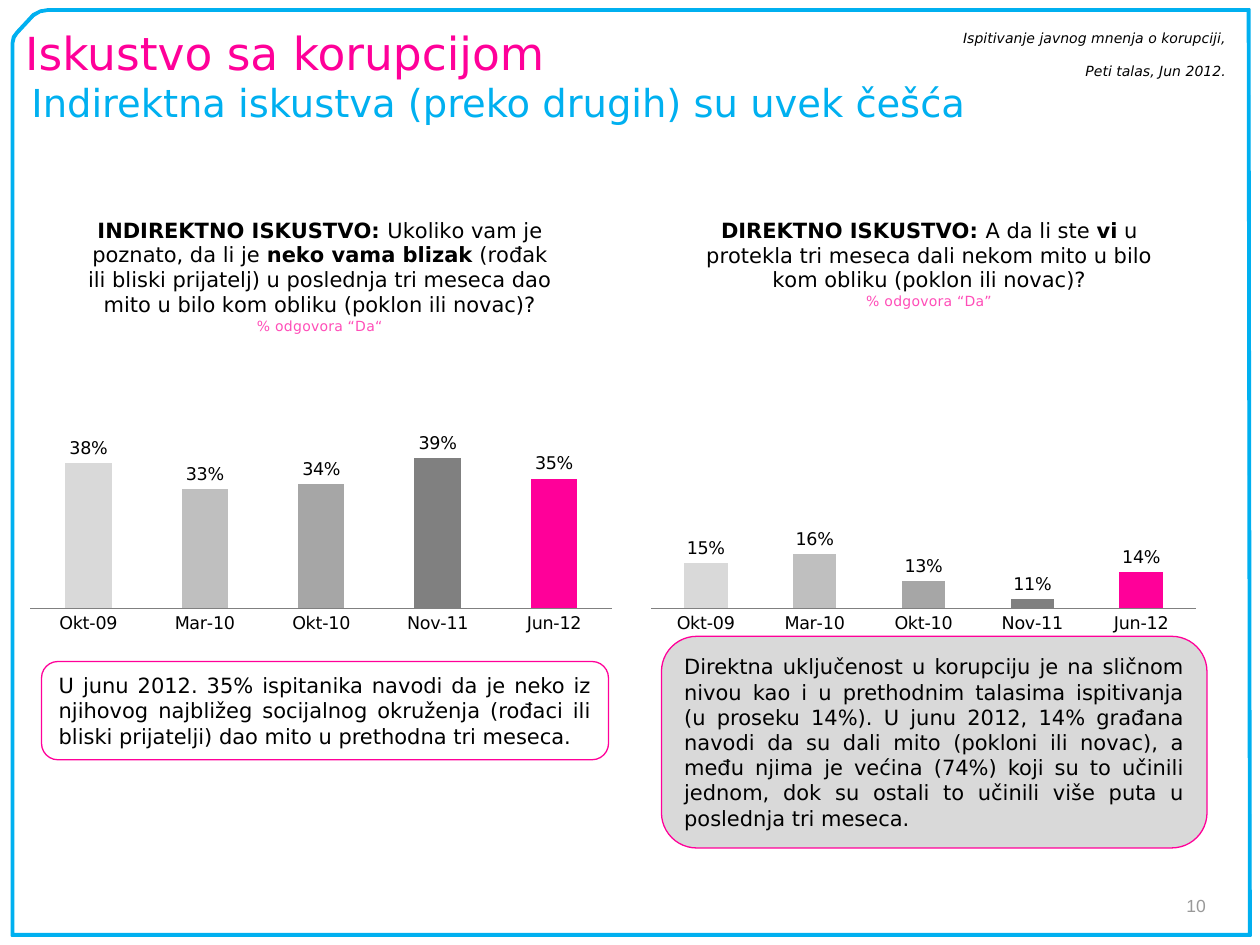
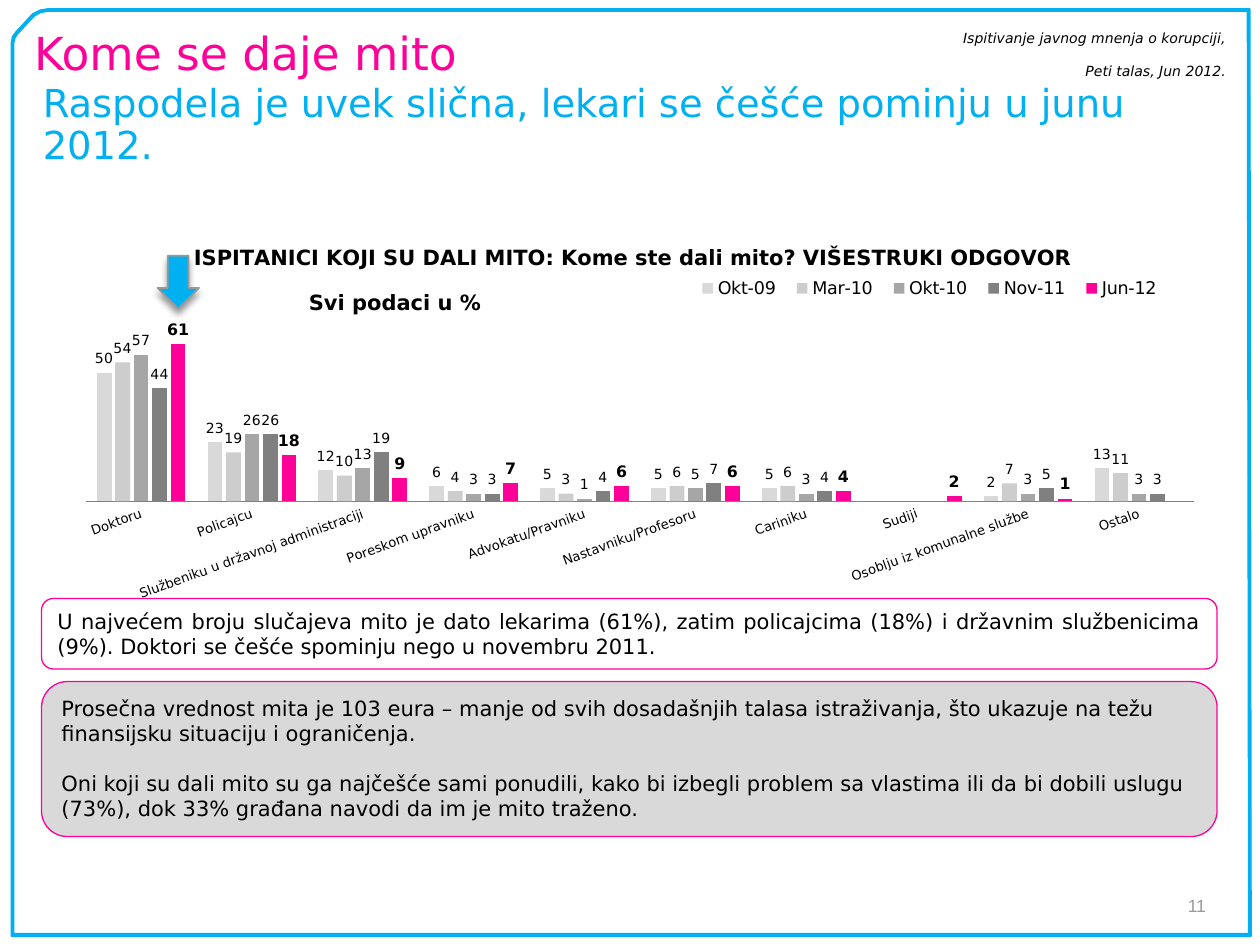
"""Build two slides on experience with corruption and bribes."""
from dataclasses import dataclass

from lxml import etree
from pptx import Presentation
from pptx.chart.data import CategoryChartData
from pptx.dml.color import RGBColor
from pptx.enum import chart as ch, shapes, text
from pptx.oxml.ns import qn
from pptx.util import Inches, Pt


@dataclass(frozen=True)
class Theme:
    """Colours, fonts and type sizes of the deck."""
    pink: str = "FF0099"
    rose: str = "FF4DB8"
    blue: str = "00B0F0"
    black: str = "000000"
    gray: str = "999999"
    axis: str = "808080"
    panel: str = "D9D9D9"
    bars: tuple = ("D9D9D9", "BFBFBF", "A6A6A6", "808080", "FF0099")
    font: str = "DejaVu Sans"
    plain: str = "Arial"
    head: float = 26
    sub: float = 22
    body: float = 12
    mid: float = 10
    bold: float = 9
    small: float = 8
    tick: float = 7.5


T = Theme()
WAVES = ("Okt-09", "Mar-10", "Okt-10", "Nov-11", "Jun-12")


def rgb(code):
    """Turn a hex code into a colour."""
    return RGBColor.from_string(code)


def style(font, size, color=T.black, name=T.font, bold=False, italic=False):
    """Format one font."""
    font.size, font.name = Pt(size), name
    font.bold, font.italic = bold, italic
    font.color.rgb = rgb(color)


def write(frame, lines, size, align="LEFT", anchor="TOP", gap=0, inset=None, **look):
    """Fill a text frame with paragraphs of one style."""
    frame.text = "\n".join(lines)
    frame.word_wrap = True
    frame.vertical_anchor = getattr(text.MSO_ANCHOR, anchor)
    if inset is not None:
        frame.margin_left = frame.margin_right = Inches(inset)
        frame.margin_top = frame.margin_bottom = Inches(inset)
    for i, para in enumerate(frame.paragraphs):
        para.alignment = getattr(text.PP_ALIGN, align)
        if i:
            para.space_before = Pt(gap)
        for run in para.runs:
            style(run.font, size, **look)


def label(slide, box, lines, size, **opts):
    """Add a text box."""
    frame = slide.shapes.add_textbox(*map(Inches, box)).text_frame
    write(frame, lines, size, **opts)
    return frame


def frame(slide):
    """Draw the border with its cut corner."""
    outer = [(0.13, 0.25), (0.1, 0.29), (0.09, 0.34), (0.09, 7.43), (9.93, 7.43),
             (9.92, 0.07), (0.38, 0.07), (0.32, 0.08), (0.26, 0.11)]
    inner = [(0.27, 0.13), (0.32, 0.1), (0.38, 0.09), (9.9, 0.09), (9.91, 7.41),
             (0.11, 7.41), (0.11, 0.34), (0.12, 0.3), (0.14, 0.27)]
    outer, inner = ([tuple(map(Inches, dot)) for dot in path] for path in (outer, inner))
    pen = slide.shapes.build_freeform(*outer[0], scale=1.0)
    pen.add_line_segments(outer[1:])
    pen.move_to(*inner[0])
    pen.add_line_segments(inner[1:])
    paint(pen.convert_to_shape(), T.blue, T.blue, 0)


def paint(shape, fill, line, width):
    """Set fill and outline, and drop the shadow."""
    shape.shadow.inherit = False
    if fill:
        shape.fill.solid()
        shape.fill.fore_color.rgb = rgb(fill)
    else:
        shape.fill.background()
    shape.line.color.rgb = rgb(line)
    shape.line.width = Pt(width)


def start(deck, title, left, sub, box, page):
    """Add a slide with border, titles, survey note and page number."""
    slide = deck.slides.add_slide(deck.slide_layouts[5])
    frame(slide)
    head = slide.shapes.title
    head.left, head.top, head.width, head.height = map(Inches, (left, 0.2, 9.61, 0.43))
    write(head.text_frame, [title], T.head, inset=0, color=T.pink)
    below = label(slide, box, [sub], T.sub, inset=0, color=T.blue)
    below.paragraphs[0].line_spacing = 0.9
    label(slide, (7, 0.18, 2.83, 0.5),
          ["Ispitivanje javnog mnenja o korupciji,", "Peti talas, Jun 2012."],
          T.small, align="RIGHT", anchor="MIDDLE", gap=9.5, italic=True)
    label(slide, (9.18, 7.1, 0.39, 0.17), [str(page)], T.mid, align="RIGHT",
          anchor="MIDDLE", inset=0, color=T.gray, name=T.plain)
    return slide


def panel(slide, box, lines, fill=None, **opts):
    """Add a rounded comment box."""
    shape = slide.shapes.add_shape(shapes.MSO_SHAPE.ROUNDED_RECTANGLE, *map(Inches, box))
    paint(shape, fill, T.pink, 0.75)
    write(shape.text_frame, lines, T.body, **opts)


def arrow(slide, box):
    """Add a down arrow with a soft shadow."""
    shape = slide.shapes.add_shape(shapes.MSO_SHAPE.DOWN_ARROW, *map(Inches, box))
    paint(shape, T.blue, T.gray, 1)
    effects = shape._element.spPr.find(qn("a:effectLst"))
    shade = etree.SubElement(effects, qn("a:outerShdw"), blurRad=str(Pt(4)),
                             dist=str(Pt(3)), dir="5400000", rotWithShape="0")
    color = etree.SubElement(shade, qn("a:srgbClr"), val=T.black)
    etree.SubElement(color, qn("a:alpha"), val="40000")


def place(node, **spots):
    """Give a chart part a manual layout."""
    lay = node.find(qn("c:layout"))
    if lay is None:
        lay = etree.Element(qn("c:layout"))
        node.insert(0, lay)
    hand = etree.SubElement(lay, qn("c:manualLayout"))
    if node.tag == qn("c:plotArea"):
        etree.SubElement(hand, qn("c:layoutTarget"), val="inner")
    for axis in "xy":
        etree.SubElement(hand, qn(f"c:{axis}Mode"), val="edge")
    for key, val in spots.items():
        etree.SubElement(hand, qn(f"c:{key}"), val=str(val))


def bars(slide, box, cats, rows, plot, span, tick, form):
    """Add a column chart whose plot fills the given slide area."""
    data = CategoryChartData()
    data.categories = cats
    for name, vals in rows:
        data.add_series(name, vals)
    kind = ch.XL_CHART_TYPE.COLUMN_CLUSTERED
    chart = slide.shapes.add_chart(kind, *map(Inches, box), data).chart
    style(chart.font, T.mid)
    chart.has_legend = False
    group = chart.plots[0]
    group.gap_width, group.overlap, group.vary_by_categories = 150, -25, False
    value, cat = chart.value_axis, chart.category_axis
    value.minimum_scale, value.maximum_scale = span
    value.has_major_gridlines = value.visible = False
    cat.major_tick_mark = ch.XL_TICK_MARK.NONE
    cat.format.line.color.rgb = rgb(T.axis)
    style(cat.tick_labels.font, tick)
    for row in group.series:
        tags = row.data_labels
        tags.show_value = True
        tags.number_format, tags.number_format_is_linked = form, False
        tags.position = ch.XL_LABEL_POSITION.OUTSIDE_END
        style(tags.font, T.mid)
    left, top, wide, high = box
    place(chart._chartSpace.chart.plotArea, x=(plot[0] - left) / wide,
          y=(plot[1] - top) / high, w=plot[2] / wide, h=plot[3] / high)
    return chart


def caption(chart, parts, note, x, y):
    """Write the chart title from plain and bold parts, with a note below."""
    block = chart.chart_title.text_frame
    para = block.paragraphs[0]
    for i, part in enumerate(parts):
        run = para.add_run()
        run.text = part
        style(run.font, T.body, bold=i % 2 == 0)
    if note:
        para = block.add_paragraph()
        para.text = note
        style(para.runs[0].font, T.small, T.rose)
    place(chart.chart_title._element, x=x, y=y)


def trend(slide, box, vals, plot, top, parts, note):
    """Add a chart of one question over all waves."""
    chart = bars(slide, box, WAVES, [("Series 1", vals)], plot, (10, top), T.mid, "0\\%")
    row = chart.plots[0].series[0]
    for i, color in enumerate(T.bars):
        fill = row.points[i].format.fill
        fill.solid()
        fill.fore_color.rgb = rgb(color)
    caption(chart, parts, note, 0.11, 0.04)


def takers(slide):
    """Add the chart of who was bribed, by wave."""
    cats = ("Doktoru", "Policajcu", "Službeniku u državnoj administraciji",
            "Poreskom upravniku", "Advokatu/Pravniku", "Nastavniku/Profesoru",
            "Cariniku", "Sudiji", "Osoblju iz komunalne službe", "Ostalo")
    vals = ((50, 23, 12, 6, 5, 5, 5, None, 2, 13),
            (54, 19, 10, 4, 3, 6, 6, None, 7, 11),
            (57, 26, 13, 3, 1, 5, 3, None, 3, 3),
            (44, 26, 19, 3, 4, 7, 4, None, 5, 3),
            (61, 18, 9, 7, 6, 6, 4, 2, 1, None))
    chart = bars(slide, (0.5, 1.75, 9.17, 3.08), cats, zip(WAVES, vals),
                 (0.68, 2.55, 8.8, 1.43), (0, 70), T.tick, "0")
    for row, color in zip(chart.plots[0].series, T.bars):
        fill = row.format.fill
        fill.solid()
        fill.fore_color.rgb = rgb(color)
        last = color == T.pink
        style(row.data_labels.font, T.bold if last else T.small, bold=last)
        if row.name == "Mar-10":
            tint = next(row._element.spPr.iter(qn("a:srgbClr")))
            etree.SubElement(tint, qn("a:alpha"), val="77000")
    chart.category_axis._element.txPr.find(qn("a:bodyPr")).set("rot", "-1200000")
    chart.has_legend = True
    key = chart.legend
    key.position = ch.XL_LEGEND_POSITION.TOP
    key.include_in_layout = False
    style(key.font, T.mid)
    place(key._element, x=0.54, y=0.13, w=0.42, h=0.09)
    caption(chart, ["ISPITANICI KOJI SU DALI MITO: Kome ste dali mito? VIŠESTRUKI ODGOVOR "],
            None, 0.11, 0.05)


def share(deck):
    """Build the slide on indirect and direct experience."""
    slide = start(deck, "Iskustvo sa korupcijom", 0.2,
                  "Indirektna iskustva (preko drugih) su uvek češća",
                  (0.25, 0.67, 8.17, 0.33), 10)
    trend(slide, (5.08, 1.54, 4.5, 3.56), (15, 16, 13, 11, 14), (5.17, 2.67, 4.32, 2.16), 40,
          ["DIREKTNO ISKUSTVO: ", "A da li ste ", "vi",
           " u protekla tri meseca dali nekom mito u bilo kom obliku (poklon ili novac)?"],
          "% odgovora “Da”")
    trend(slide, (0.14, 1.54, 4.81, 3.56), (38, 33, 34, 39, 35), (0.24, 2.77, 4.62, 2.06), 60,
          ["INDIREKTNO ISKUSTVO: ", "Ukoliko vam je poznato, da li je ", "neko vama blizak",
           " (rođak ili bliski prijatelj) u poslednja tri meseca dao mito u bilo kom obliku "
           "(poklon ili novac)?"], "% odgovora “Da“")
    panel(slide, (0.33, 5.25, 4.5, 0.78),
          ["U junu 2012. 35% ispitanika navodi da je neko iz njihovog najbližeg socijalnog "
           "okruženja (rođaci ili bliski prijatelji) dao mito u prethodna tri meseca."],
          align="JUSTIFY", anchor="MIDDLE")
    panel(slide, (5.25, 5.05, 4.33, 1.68),
          ["Direktna uključenost u korupciju je na sličnom nivou kao i u prethodnim talasima "
           "ispitivanja (u proseku 14%). U junu 2012, 14% građana navodi da su dali mito "
           "(pokloni ili novac), a među njima je većina (74%) koji su to učinili jednom, dok "
           "su ostali to učinili više puta u poslednja tri meseca."],
          T.panel, align="JUSTIFY", anchor="MIDDLE")


def bribes(deck):
    """Build the slide on who receives bribes."""
    slide = start(deck, "Kome se daje mito", 0.27,
                  "Raspodela je uvek slična, lekari se češće pominju u junu 2012.",
                  (0.34, 0.67, 9.5, 0.67), 11)
    takers(slide)
    panel(slide, (0.33, 4.75, 9.33, 0.56),
          ["U najvećem broju slučajeva mito je dato lekarima (61%), zatim policajcima (18%) i "
           "državnim službenicima (9%). Doktori se češće spominju nego u novembru 2011."],
          align="JUSTIFY", anchor="MIDDLE")
    panel(slide, (0.33, 5.41, 9.33, 1.23),
          ["Prosečna vrednost mita je 103 eura – manje od svih dosadašnjih talasa "
           "istraživanja, što ukazuje na težu finansijsku situaciju i ograničenja.",
           "Oni koji su dali mito su ga najčešće sami ponudili, kako bi izbegli problem sa "
           "vlastima ili da bi dobili uslugu (73%), dok 33% građana navodi da im je mito "
           "traženo."], T.panel, gap=14)
    arrow(slide, (1.25, 2.03, 0.33, 0.42))
    note = label(slide, (2.33, 2.25, 1.61, 0.3), ["Svi podaci u %"], T.body,
                 align="CENTER", bold=True)
    note.word_wrap = False


def main():
    """Build and save the deck."""
    deck = Presentation()
    deck.slide_width, deck.slide_height = Inches(10), Inches(7.5)
    share(deck)
    bribes(deck)
    deck.save("out.pptx")


if __name__ == "__main__":
    main()
